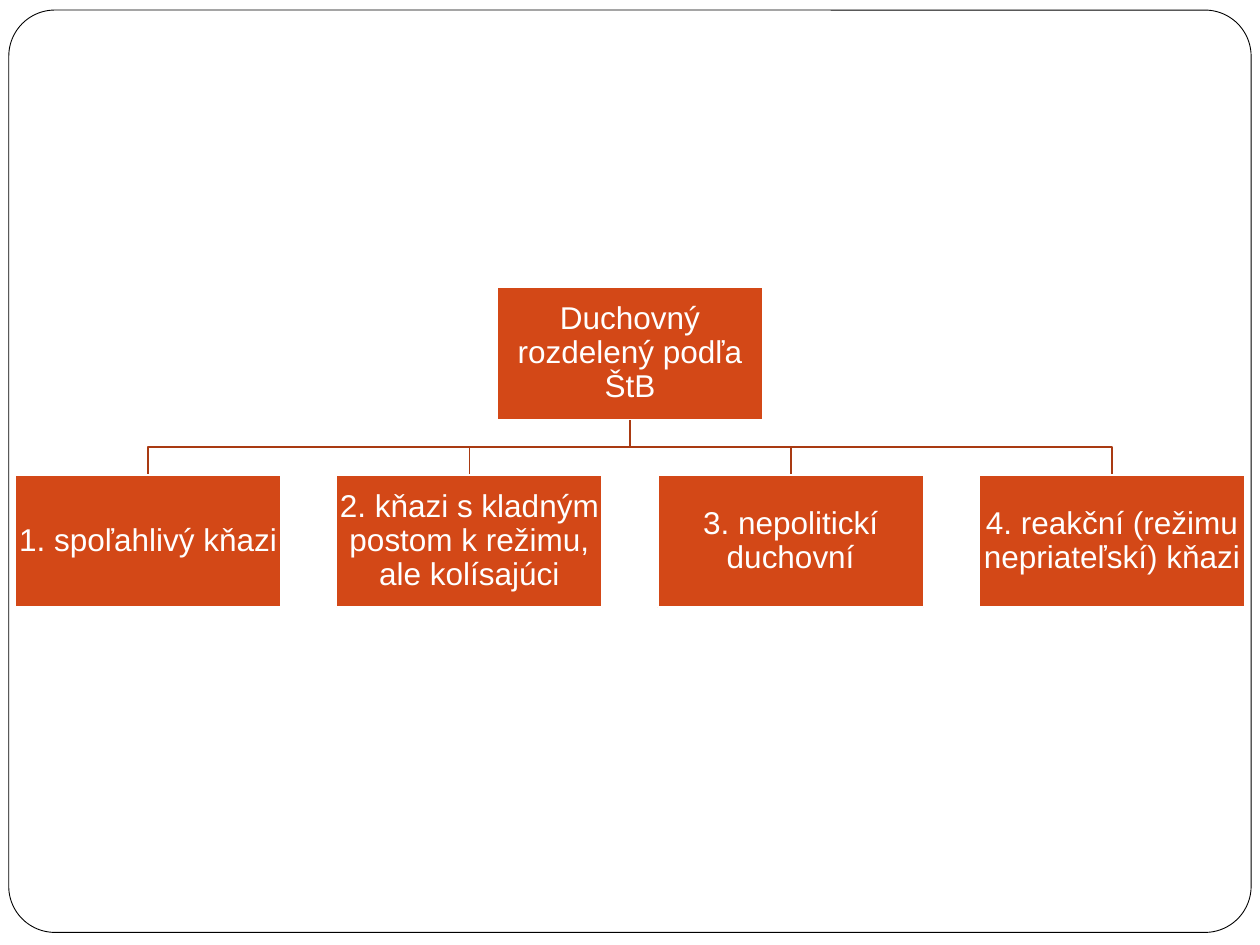
import pptx
import pptx.dml.color
import pptx.enum.shapes
import pptx.enum.text
import pptx.util

Inches = pptx.util.Inches
Pt = pptx.util.Pt
RGBColor = pptx.dml.color.RGBColor
MSO_SHAPE = pptx.enum.shapes.MSO_SHAPE

WHITE = RGBColor(0xFF, 0xFF, 0xFF)
BLACK = RGBColor(0x00, 0x00, 0x00)
ORANGE = RGBColor(0xD3, 0x48, 0x17)
RUST = RGBColor(0xA9, 0x3A, 0x12)

BOX_W, BOX_H = 2.11, 1.05
CENTER_X = 5
ROOT_TOP, CHILD_TOP = 2.28, 3.77
PITCH = 2.55

ROOT = "Duchovný rozdelený podľa ŠtB"
CHILDREN = [
    "1. spoľahlivý kňazi",
    "2. kňazi s kladným postom k režimu, ale kolísajúci",
    "3. nepolitickí duchovní",
    "4. reakční (režimu nepriateľskí) kňazi",
]


class OrgChart:
    frame_format = {
        "word_wrap": True,
        "vertical_anchor": pptx.enum.text.MSO_ANCHOR.MIDDLE,
        "margin_left": Inches(0.01),
        "margin_right": Inches(0.01),
        "margin_top": Inches(0.01),
        "margin_bottom": Inches(0.01),
    }
    paragraph_format = {
        "alignment": pptx.enum.text.PP_ALIGN.CENTER,
        "line_spacing": 0.9,
    }
    font_format = {"name": "Arial", "size": Pt(18)}

    def __init__(self, slide):
        self.s = slide

    def apply(self, target, values):
        for name, value in values.items():
            setattr(target, name, value)

    def outline(self, sp, color, width):
        sp.shadow.inherit = False
        sp.line.color.rgb = color
        sp.line.width = Pt(width)

    def shape(self, kind, x, y, w, h, fill, line, width):
        sp = self.s.shapes.add_shape(
            kind, Inches(x), Inches(y), Inches(w), Inches(h))
        sp.fill.solid()
        sp.fill.fore_color.rgb = fill
        self.outline(sp, line, width)
        return sp

    def border(self):
        sp = self.shape(MSO_SHAPE.ROUNDED_RECTANGLE, 0.07, 0.08, 9.86, 7.32,
                        WHITE, BLACK, 0.5)
        sp.adjustments[0] = 0.05

    def branch(self, x):
        start, end = ROOT_TOP + BOX_H, CHILD_TOP
        middle = (start + end) / 2
        points = [(CENTER_X, middle), (x, middle), (x, end)]
        fb = self.s.shapes.build_freeform(Inches(CENTER_X), Inches(start))
        fb.add_line_segments(
            [(Inches(px), Inches(py)) for px, py in points], close=False)
        sp = fb.convert_to_shape()
        sp.fill.background()
        self.outline(sp, RUST, 1)

    def box(self, center, top, text):
        sp = self.shape(MSO_SHAPE.RECTANGLE, center - BOX_W / 2, top,
                        BOX_W, BOX_H, ORANGE, WHITE, 1)
        tf = sp.text_frame
        self.apply(tf, self.frame_format)
        p = tf.paragraphs[0]
        self.apply(p, self.paragraph_format)
        r = p.add_run()
        r.text = text
        self.apply(r.font, self.font_format)
        r.font.color.rgb = WHITE


def main():
    prs = pptx.Presentation()
    prs.slide_width = Inches(10)
    prs.slide_height = Inches(7.5)
    chart = OrgChart(prs.slides.add_slide(prs.slide_layouts[6]))
    first = CENTER_X - PITCH * (len(CHILDREN) - 1) / 2
    centers = [first + PITCH * i for i in range(len(CHILDREN))]

    chart.border()
    for x in reversed(centers):
        chart.branch(x)
    chart.box(CENTER_X, ROOT_TOP, ROOT)
    for x, text in zip(centers, CHILDREN):
        chart.box(x, CHILD_TOP, text)
    prs.save("out.pptx")


if __name__ == "__main__":
    main()
